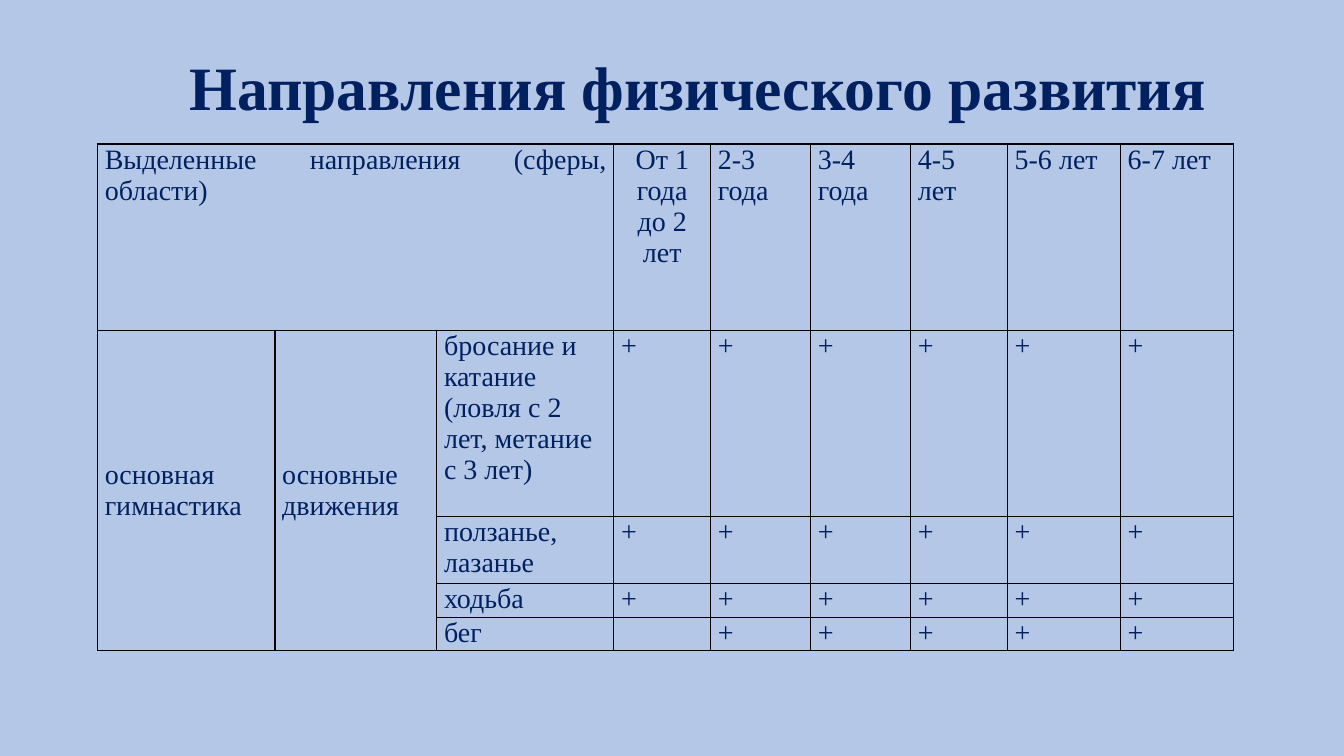
"""Builds the slide on the directions of physical development."""
from dataclasses import dataclass

from lxml.etree import fromstring
from pptx import Presentation
from pptx.dml.color import RGBColor
from pptx.enum.text import MSO_ANCHOR as Anchor, MSO_AUTO_SIZE as AutoSize, PP_ALIGN as Align
from pptx.oxml.ns import nsdecls
from pptx.util import Cm, Pt

COLORS = {"background": "B4C7E7", "text": "002060", "border": "000000"}
FONT_NAME = "Times New Roman"
COLUMN_WIDTHS = (4.47, 4.08, 4.46, 2.44, 2.52, 2.52, 2.44, 2.85, 2.85)
ROW_HEIGHTS = (4.69, 4.69, 1.69, 0.85, 0.84)
FIRST_AGE_COLUMN = 3
CELL_MARGINS = {
    "margin_left": Cm(0.18), "margin_right": Cm(0.18),
    "margin_top": Cm(0), "margin_bottom": Cm(0),
}
TITLE_FRAME = {
    "margin_left": Cm(0.25), "margin_right": Cm(0.25), "word_wrap": True,
    "auto_size": AutoSize.NONE, "vertical_anchor": Anchor.MIDDLE,
}
TITLE_PLACE = {"left": Cm(1.12), "top": Cm(1.09), "width": Cm(32.21), "height": Cm(2.13)}


@dataclass(frozen=True)
class Entry:
    """A table cell with its text, alignment and span."""
    row: int
    column: int
    text: str
    align: Align = Align.JUSTIFY
    anchor: Anchor = Anchor.TOP
    row_span: int = 1
    column_span: int = 1


@dataclass(frozen=True)
class Movement:
    """A kind of movement and the first age group that practises it."""
    name: str
    first_group: int = 0
    align: Align = Align.JUSTIFY


AGE_GROUPS = ("2-3 года", "3-4 года", "4-5 лет", "5-6 лет", "6-7 лет")
MOVEMENTS = (
    Movement("бросание и катание (ловля с 2 лет, метание с 3 лет)", align=Align.LEFT),
    Movement("ползанье, лазанье"),
    Movement("ходьба"),
    Movement("бег", first_group=1),
)


def apply_values(target: object, values: dict) -> None:
    """Set every attribute named in the format values."""
    for name, value in values.items():
        setattr(target, name, value)


def write_text(frame, text: str, size: int, align: Align, bold: bool = False) -> None:
    """Write the lines of the text as formatted paragraphs."""
    frame.text = text
    for paragraph in frame.paragraphs:
        paragraph.alignment = align
        for run in paragraph.runs:
            apply_values(run.font, {"name": FONT_NAME, "size": Pt(size), "bold": bold})
            run.font.color.rgb = RGBColor.from_string(COLORS["text"])


def table_entries() -> list[Entry]:
    """List the filled cells of the table."""
    entries = [
        Entry(0, 0, "Выделенные направления (сферы, области)", column_span=3),
        Entry(0, FIRST_AGE_COLUMN, "От 1 года\nдо 2 лет", Align.CENTER),
    ]
    for column, group in enumerate(AGE_GROUPS, FIRST_AGE_COLUMN + 1):
        entries.append(Entry(0, column, group))
    for column, name in enumerate(("основная гимнастика", "основные движения")):
        entries.append(Entry(1, column, name, Align.LEFT, Anchor.MIDDLE, row_span=len(MOVEMENTS)))
    for row, movement in enumerate(MOVEMENTS, 1):
        entries.append(Entry(row, FIRST_AGE_COLUMN - 1, movement.name, movement.align))
        for column in range(FIRST_AGE_COLUMN + movement.first_group, len(COLUMN_WIDTHS)):
            entries.append(Entry(row, column, "+"))
    return entries


def format_cell(cell) -> None:
    """Clear the fill, set the margins and draw the four borders."""
    cell.fill.background()
    apply_values(cell, CELL_MARGINS)
    properties = cell._tc.get_or_add_tcPr()
    for index, side in enumerate(("lnL", "lnR", "lnT", "lnB")):
        border = fromstring(
            f'<a:{side} {nsdecls("a")} w="{Pt(1)}"><a:solidFill>'
            f'<a:srgbClr val="{COLORS["border"]}"/></a:solidFill></a:{side}>'
        )
        properties.insert(index, border)


def add_directions_table(slide) -> None:
    """Add the table of directions by age group."""
    table = slide.shapes.add_table(
        len(ROW_HEIGHTS), len(COLUMN_WIDTHS), Cm(2.46), Cm(3.63),
        Cm(sum(COLUMN_WIDTHS)), Cm(sum(ROW_HEIGHTS)),
    ).table
    apply_values(table, {"first_row": False, "horz_banding": False})
    for column, width in zip(table.columns, COLUMN_WIDTHS):
        column.width = Cm(width)
    for row, height in zip(table.rows, ROW_HEIGHTS):
        row.height = Cm(height)
    for cell in table.iter_cells():
        format_cell(cell)
    for entry in table_entries():
        cell = table.cell(entry.row, entry.column)
        if entry.row_span > 1 or entry.column_span > 1:
            cell.merge(table.cell(entry.row + entry.row_span - 1,
                                  entry.column + entry.column_span - 1))
        cell.vertical_anchor = entry.anchor
        write_text(cell.text_frame, entry.text, 20, entry.align)


def add_title(slide) -> None:
    """Place and format the slide title."""
    title = slide.shapes.title
    apply_values(title, TITLE_PLACE)
    apply_values(title.text_frame, TITLE_FRAME)
    write_text(title.text_frame, "Направления физического развития", 44, Align.CENTER, bold=True)
    properties = title.text_frame.paragraphs[0]._p.get_or_add_pPr()
    properties.set("marL", str(Cm(0.74)))
    properties.set("indent", "0")


def main() -> None:
    """Build and save the presentation."""
    presentation = Presentation()
    apply_values(presentation, {"slide_width": Cm(33.87), "slide_height": Cm(19.05)})
    slide = presentation.slides.add_slide(presentation.slide_layouts[5])
    slide.background.fill.solid()
    slide.background.fill.fore_color.rgb = RGBColor.from_string(COLORS["background"])
    add_title(slide)
    add_directions_table(slide)
    presentation.save("out.pptx")


if __name__ == "__main__":
    main()
